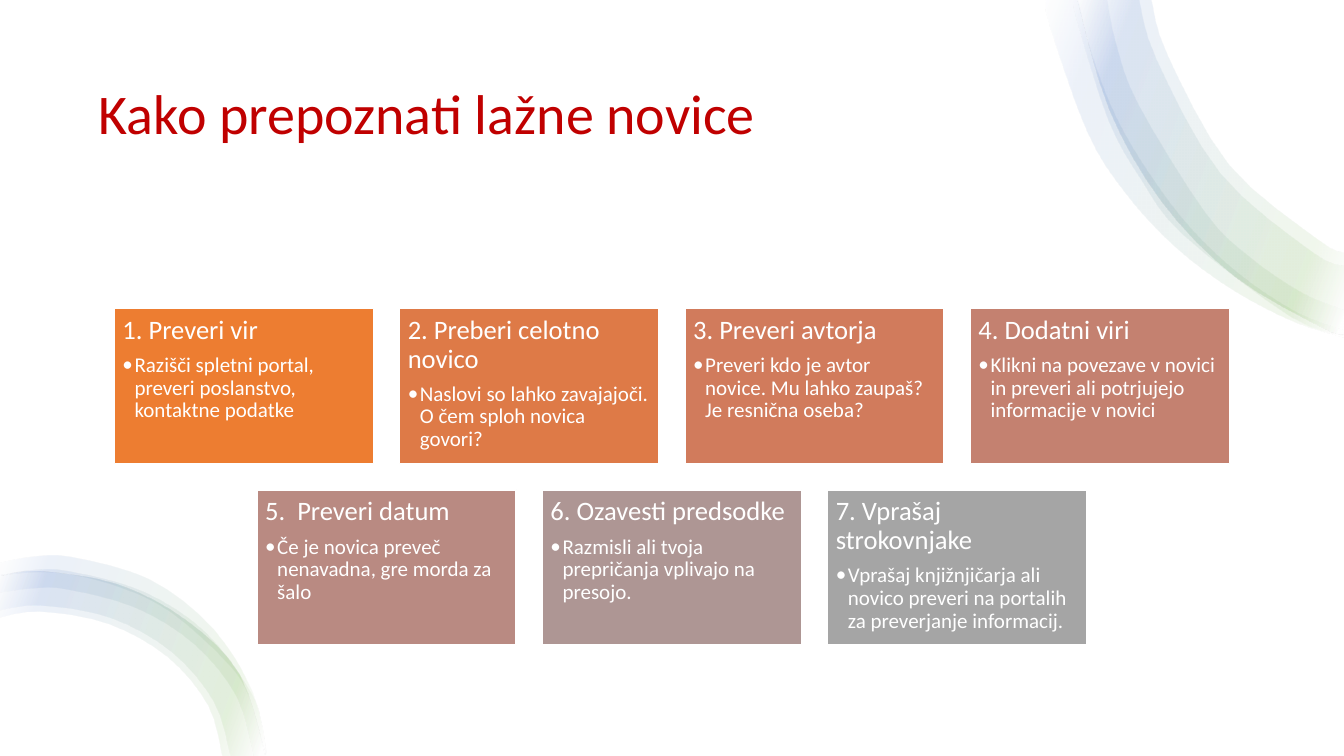
"""Builds a slide with seven tips for spotting fake news and curved corner ribbons."""
from lxml import etree
from pptx import Presentation
from pptx import util as u
from pptx.dml.color import RGBColor
from pptx.enum import shapes, text
from pptx.oxml import ns

W, H = 13.33, 7.5
FONT = "Calibri"
TITLE = "Kako prepoznati lažne novice"
ROWS = [
    [("1. Preveri vir", "Razišči spletni portal, preveri poslanstvo, kontaktne podatke", "ED7D31"),
     ("2. Preberi celotno novico", "Naslovi so lahko zavajajoči. O čem sploh novica govori?", "DE7A47"),
     ("3. Preveri avtorja", "Preveri kdo je avtor novice. Mu lahko zaupaš? Je resnična oseba?", "D17B5C"),
     ("4. Dodatni viri", "Klikni na povezave v novici in preveri ali potrjujejo informacije v novici", "C48170")],
    [("5.  Preveri datum", "Če je novica preveč nenavadna, gre morda za šalo", "B98A82"),
     ("6. Ozavesti predsodke", "Razmisli ali tvoja prepričanja vplivajo na presojo.", "AE9694"),
     ("7. Vprašaj strokovnjake",
      "Vprašaj knjižnjičarja ali novico preveri na portalih za preverjanje informacij.", "A5A5A5")],
]
CARD_W, CARD_H, GAP, TOP = 2.57, 1.54, 0.26, 3.06
STOPS = [(2, "FFFFFF"), (16, "70AD47"), (85, "4472C4"), (100, "FFFFFF")]
OPACITY, ANGLE = 10, 200

TOP_EDGE = [(W, 3.32), (13.09, 3.24), (12.24, 2.74), (11.52, 2), (11, 1.08), (10.69, 0)]
LOW_EDGE = [(2.63, H), (2.37, 6.69), (1.85, 6.16), (1.17, 5.8), (0.4, 5.67), (0, 5.72)]
RIBBONS = [
    ([(W, 3.35), (12.82, 3.19), (12.21, 2.87), (11.65, 2.45), (11.16, 1.92), (10.78, 1.31),
      (10.41, 0.26), (10.37, 0)],
     [(10.69, 0), (10.82, 0.52), (11.06, 1.15), (11.4, 1.73), (11.81, 2.27), (12.3, 2.73),
      (12.86, 3.1), (W, 3.28)]),
    (TOP_EDGE, [(11.42, 0), (11.58, 0.55), (12.19, 1.64), (13.07, 2.38), (W, 2.51)]),
    ([(W, 3.33), (12.79, 3.14), (11.73, 2.33), (11.32, 1.79), (10.99, 1.19), (10.68, 0.2), (10.65, 0)],
     [(10.98, 0), (11.07, 0.44), (11.29, 1.04), (11.95, 2.11), (12.39, 2.55), (12.9, 2.9), (W, 3.08)]),
    (TOP_EDGE, [(11.3, 0), (11.47, 0.59), (12.1, 1.72), (13.01, 2.5), (W, 2.64)]),
    (LOW_EDGE, [(0, 6.13), (0.4, 6.07), (1.07, 6.19), (1.66, 6.52), (2.06, 7), (2.2, H)]),
    (LOW_EDGE, [(0, 6.06), (0.4, 6.01), (1.09, 6.13), (1.7, 6.47), (2.12, 6.97), (2.28, H)]),
    ([(2.63, H), (2.59, 7.19), (2.47, 6.85), (2.03, 6.27), (1.42, 5.87), (0.69, 5.67), (0.31, 5.66),
      (0, 5.71)],
     [(0, 5.88), (0.33, 5.84), (0.67, 5.85), (1.34, 6.03), (1.92, 6.39), (2.34, 6.91), (2.51, H)]),
    ([(2.64, H), (2.5, 6.87), (2.1, 6.23), (1.48, 5.75), (0.71, 5.53), (0.31, 5.53), (0, 5.59)],
     [(0, 5.72), (0.32, 5.68), (0.69, 5.7), (1.22, 5.84), (1.71, 6.09), (2.25, 6.58), (2.47, 6.93),
      (2.62, H)]),
]


def rgb(value):
    return RGBColor.from_string(value)


def apply(obj, **values):
    for name, value in values.items():
        setattr(obj, name, value)


def smooth(anchors, steps=4):
    pts = [anchors[0], *anchors, anchors[-1]]
    curve = []
    for a, b, c, d in zip(pts, pts[1:], pts[2:], pts[3:]):
        for t in (i / steps for i in range(steps)):
            curve.append(tuple(
                (2 * q + (r - p) * t + (2 * p - 5 * q + 4 * r - s) * t ** 2
                 + (3 * q - p - 3 * r + s) * t ** 3) / 2
                for p, q, r, s in zip(a, b, c, d)))
    return curve + [anchors[-1]]


def add_ribbon(slide, outer, inner):
    pts = [(u.Inches(x), u.Inches(y)) for x, y in smooth(outer) + smooth(inner)]
    builder = slide.shapes.build_freeform(*pts[0])
    builder.add_line_segments(pts[1:], close=True)
    sp = builder.convert_to_shape()
    sp.shadow.inherit = False
    sp.line.fill.background()
    sp.fill.gradient()
    grad = sp._element.spPr.find(ns.qn("a:gradFill"))
    stops = grad.find(ns.qn("a:gsLst"))
    for old in list(stops):
        stops.remove(old)
    for pos, color in STOPS:
        gs = etree.SubElement(stops, ns.qn("a:gs"), pos=str(pos * 1000))
        clr = etree.SubElement(gs, ns.qn("a:srgbClr"), val=color)
        etree.SubElement(clr, ns.qn("a:alpha"), val=str(OPACITY * 1000))
    grad.find(ns.qn("a:lin")).set("ang", str(ANGLE * 60000))


def write(p, words, size, color, after=0):
    apply(p, alignment=text.PP_ALIGN.LEFT, line_spacing=0.9, space_after=u.Pt(after))
    r = p.add_run()
    r.text = words
    apply(r.font, name=FONT, size=u.Pt(size))
    r.font.color.rgb = rgb(color)


def add_rect(slide, x, y, w, h, color):
    sp = slide.shapes.add_shape(shapes.MSO_SHAPE.RECTANGLE, *map(u.Inches, (x, y, w, h)))
    sp.shadow.inherit = False
    sp.fill.solid()
    sp.fill.fore_color.rgb = rgb(color)
    sp.line.fill.background()
    return sp


def add_card(slide, x, y, heading, tip, color):
    sp = add_rect(slide, x, y, CARD_W, CARD_H, color)
    sp.line.color.rgb = rgb("FFFFFF")
    sp.line.width = u.Pt(1)
    tf = sp.text_frame
    sides = ("left", "top", "right", "bottom")
    apply(tf, word_wrap=True, vertical_anchor=text.MSO_ANCHOR.TOP,
          **{f"margin_{side}": u.Inches(0.08) for side in sides})
    write(tf.paragraphs[0], heading, 19, "FFFFFF", 6.6)
    p = tf.add_paragraph()
    write(p, tip, 15, "FFFFFF", 2.2)
    pr = p._p.get_or_add_pPr()
    indent = u.Inches(0.12)
    for name, value in {"lvl": 1, "marL": indent, "indent": -indent}.items():
        pr.set(name, str(value))
    etree.SubElement(pr, ns.qn("a:buFont"), typeface=FONT)
    etree.SubElement(pr, ns.qn("a:buChar"), char="•")


def main():
    prs = Presentation()
    apply(prs, slide_width=u.Inches(W), slide_height=u.Inches(H))
    slide = prs.slides.add_slide(prs.slide_layouts[6])
    add_rect(slide, 0, 0, W, H, "FFFFFF")
    box = slide.shapes.add_textbox(*map(u.Inches, (0.88, 0.5, 11.57, 1.3)))
    apply(box.text_frame, word_wrap=True, vertical_anchor=text.MSO_ANCHOR.MIDDLE)
    write(box.text_frame.paragraphs[0], TITLE, 40, "C00000")
    for outer, inner in RIBBONS:
        add_ribbon(slide, outer, inner)
    for row, cards in enumerate(ROWS):
        left = (W - len(cards) * (CARD_W + GAP) + GAP) / 2
        for col, card in enumerate(cards):
            add_card(slide, left + col * (CARD_W + GAP), TOP + row * (CARD_H + GAP), *card)
    prs.save("out.pptx")


if __name__ == "__main__":
    main()
